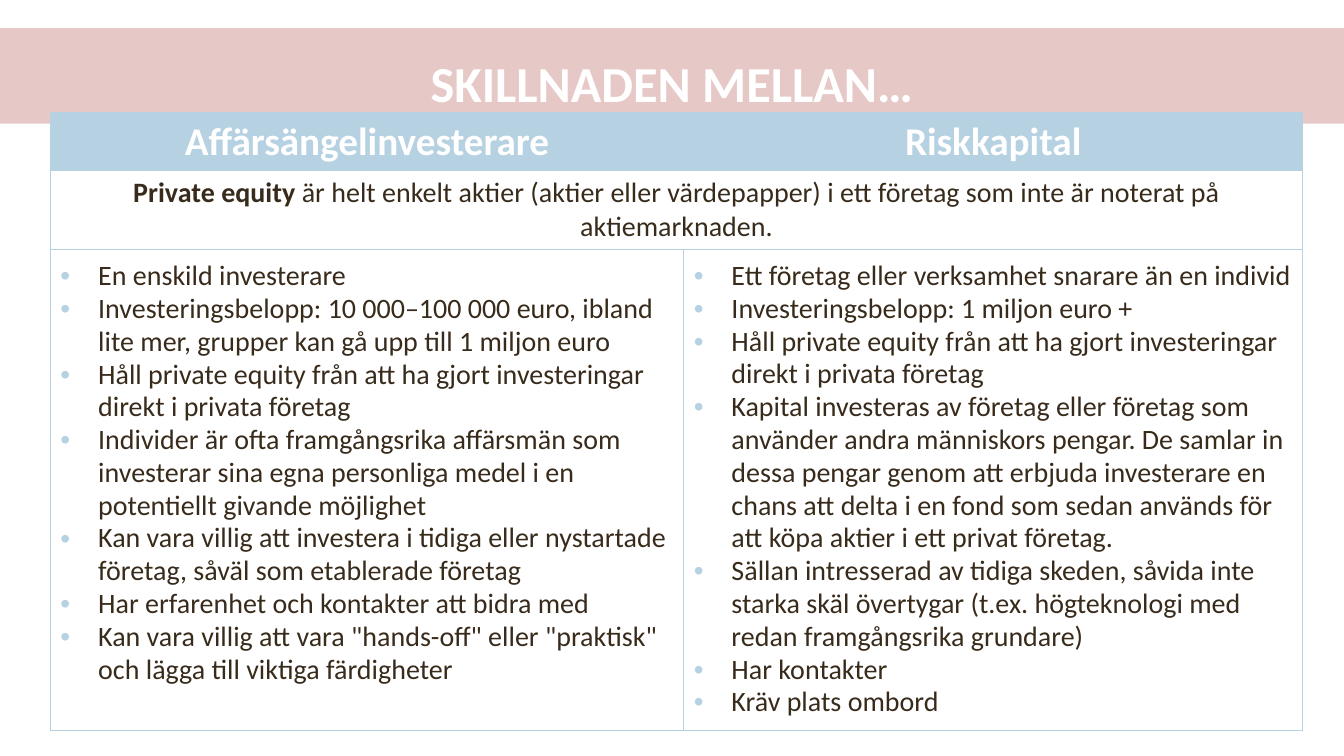
import pptx
import pptx.util
import pptx.dml.color
import pptx.enum.shapes
import pptx.enum.text
import pptx.oxml.ns
from lxml import etree

Cm = pptx.util.Cm
Pt = pptx.util.Pt
RGBColor = pptx.dml.color.RGBColor
PP_ALIGN = pptx.enum.text.PP_ALIGN
MSO_ANCHOR = pptx.enum.text.MSO_ANCHOR
qn = pptx.oxml.ns.qn

PINK = RGBColor(0xE6, 0xC8, 0xC7)
BLUE = RGBColor(0xB6, 0xD1, 0xE1)
BROWN = RGBColor(0x38, 0x2B, 0x1B)
WHITE = RGBColor(0xFF, 0xFF, 0xFF)

TITLE = {"name": "Calibri", "size": Pt(36), "bold": True}
HEADER = {"name": "Calibri", "size": Pt(28), "bold": True}
STRONG = {"name": "Calibri", "size": Pt(20), "bold": True}
BODY = {"name": "Calibri", "size": Pt(20), "bold": False}

HEADINGS = ["Affärsängelinvesterare", "Riskkapital"]
DEFINITION = [
    ("Private equity ", STRONG),
    ("är helt enkelt aktier (aktier eller värdepapper) i ett företag som inte är noterat på aktiemarknaden.", BODY),
]
POINTS = [
    [
        "En enskild investerare",
        "Investeringsbelopp: 10 000–100 000 euro, ibland lite mer, grupper kan gå upp till 1 miljon euro",
        "Håll private equity från att ha gjort investeringar direkt i privata företag",
        "Individer är ofta framgångsrika affärsmän som investerar sina egna personliga medel i en potentiellt givande möjlighet",
        "Kan vara villig att investera i tidiga eller nystartade företag, såväl som etablerade företag",
        "Har erfarenhet och kontakter att bidra med",
        'Kan vara villig att vara "hands-off" eller "praktisk" och lägga till viktiga färdigheter',
    ],
    [
        "Ett företag eller verksamhet snarare än en individ",
        "Investeringsbelopp: 1 miljon euro +",
        "Håll private equity från att ha gjort investeringar direkt i privata företag",
        "Kapital investeras av företag eller företag som använder andra människors pengar. De samlar in dessa pengar genom att erbjuda investerare en chans att delta i en fond som sedan används för att köpa aktier i ett privat företag.",
        "Sällan intresserad av tidiga skeden, såvida inte starka skäl övertygar (t.ex. högteknologi med redan framgångsrika grundare)",
        "Har kontakter",
        "Kräv plats ombord",
    ],
]


def add_run(p, text, style, color):
    r = p.add_run()
    r.text = text
    for name, value in style.items():
        setattr(r.font, name, value)
    r.font.color.rgb = color


def add_bullet(p):
    pPr = p._p.get_or_add_pPr()
    pPr.set("marL", str(Cm(0.95)))
    pPr.set("indent", str(-Cm(0.95)))
    clr = etree.SubElement(pPr, qn("a:buClr"))
    etree.SubElement(clr, qn("a:srgbClr"), val=str(BLUE))
    etree.SubElement(pPr, qn("a:buFont"), typeface="Arial")
    etree.SubElement(pPr, qn("a:buChar"), char="•")


prs = pptx.Presentation()
prs.slide_width = Cm(33.87)
prs.slide_height = Cm(19.05)
s = prs.slides.add_slide(prs.slide_layouts[6])

band = s.shapes.add_shape(
    pptx.enum.shapes.MSO_SHAPE.RECTANGLE, 0, Cm(0.71), prs.slide_width, Cm(2.41))
band.shadow.inherit = False
band.fill.solid()
band.fill.fore_color.rgb = PINK
band.line.fill.background()

title = s.shapes.add_textbox(0, Cm(1.42), prs.slide_width, Cm(1.5))
tf = title.text_frame
for name, value in {"word_wrap": True, "vertical_anchor": MSO_ANCHOR.MIDDLE,
                    "margin_top": 0, "margin_bottom": 0}.items():
    setattr(tf, name, value)
p = tf.paragraphs[0]
p.alignment = PP_ALIGN.CENTER
p.line_spacing = 0.9
add_run(p, "SKILLNADEN MELLAN…", TITLE, WHITE)

widths = [Cm(15.96), Cm(15.6)]
heights = [Cm(1.46), Cm(1.98), Cm(12.13)]
table = s.shapes.add_table(
    3, 2, Cm(1.27), Cm(2.84), sum(widths), sum(heights)).table
table.first_row = False
table.horz_banding = False
for column, width in zip(table.columns, widths):
    column.width = width
for row, height in zip(table.rows, heights):
    row.height = height

for i, row in enumerate(table.rows):
    for cell in row.cells:
        cell.vertical_anchor = MSO_ANCHOR.MIDDLE
        tcPr = cell._tc.get_or_add_tcPr()
        for side in ("lnL", "lnR", "lnT", "lnB"):
            ln = etree.SubElement(tcPr, qn("a:" + side), w=str(Pt(1)))
            fill = etree.SubElement(ln, qn("a:solidFill"))
            etree.SubElement(fill, qn("a:srgbClr"), val=str(BLUE))
        cell.fill.solid()
        cell.fill.fore_color.rgb = BLUE if i == 0 else WHITE

for col, heading in enumerate(HEADINGS):
    p = table.cell(0, col).text_frame.paragraphs[0]
    p.alignment = PP_ALIGN.CENTER
    add_run(p, heading, HEADER, WHITE)

table.cell(1, 0).merge(table.cell(1, 1))
p = table.cell(1, 0).text_frame.paragraphs[0]
p.alignment = PP_ALIGN.CENTER
for text, style in DEFINITION:
    add_run(p, text, style, BROWN)

table.cell(2, 0).margin_bottom = Cm(0.95)
for col, points in enumerate(POINTS):
    tf = table.cell(2, col).text_frame
    for i, point in enumerate(points):
        p = tf.paragraphs[0] if i == 0 else tf.add_paragraph()
        add_bullet(p)
        p.line_spacing = Pt(23.4)
        add_run(p, point, BODY, BROWN)

prs.save("out.pptx")
